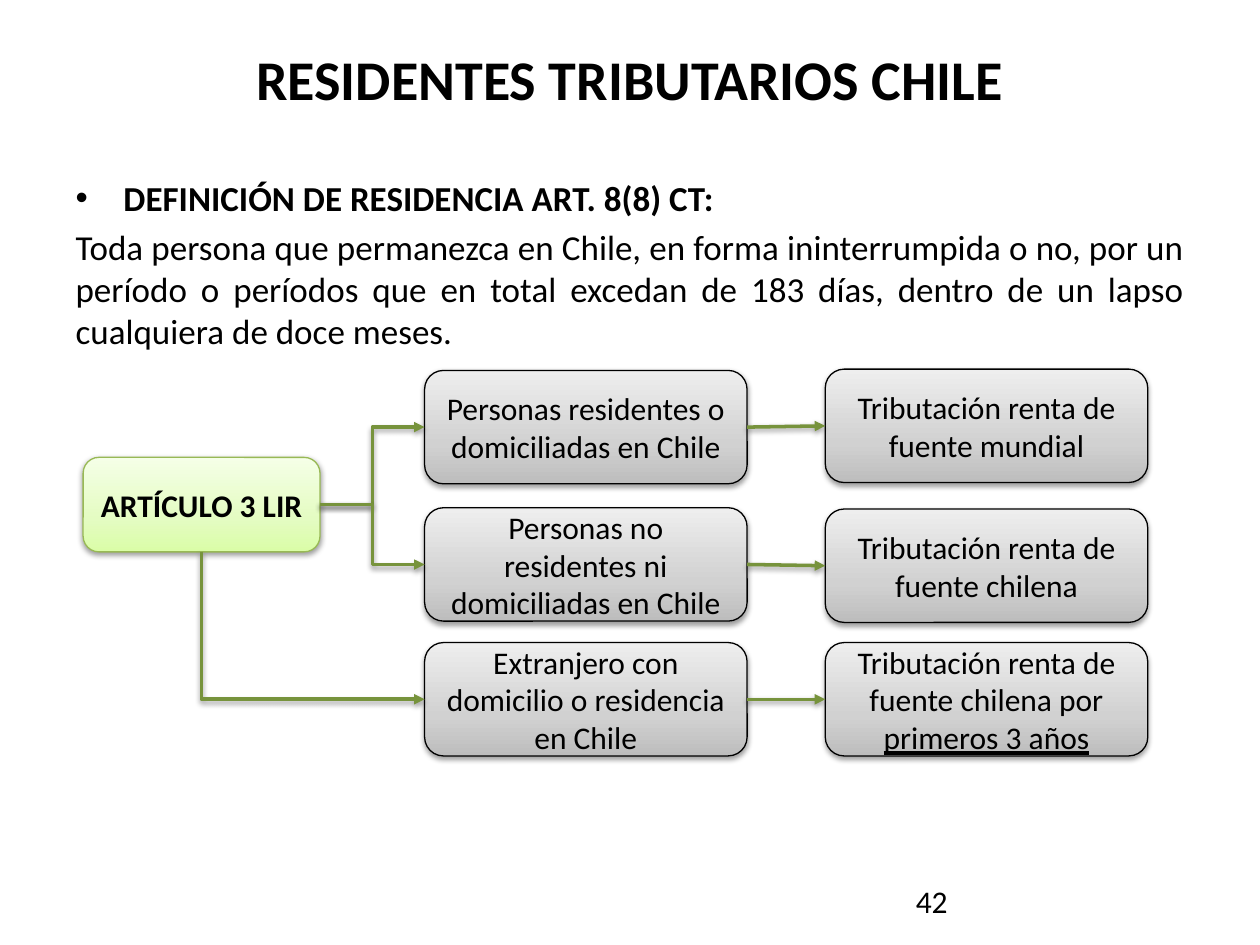
from pptx import Presentation
from pptx.dml.color import RGBColor
from pptx.enum.shapes import MSO_CONNECTOR as CONN, MSO_SHAPE as SHAPE
from pptx.enum.text import MSO_ANCHOR as ANCHOR, PP_ALIGN as ALIGN
from pptx.oxml import parse_xml
from pptx.oxml.ns import nsdecls, qn
from pptx.util import Inches, Pt

COLORS = {"text": "000000", "arrow": "77933C", "green_line": "98B955", "gray_line": "000000"}
GRADIENTS = {
    "green": {0: "DAFDA7", 35: "E4FCC2", 100: "F5FFE7"},
    "gray": {0: "BDBDBD", 35: "D1D1D1", 100: "EEEEEE"},
}
TOP, LEFT, BOTTOM, RIGHT = range(4)
BOX_W, BOX_H = 2.56, 0.9
ROWS = [
    ("Personas residentes o domiciliadas en Chile", 2.94,
     [("Tributación renta de fuente mundial", {})], 2.93),
    ("Personas no residentes ni domiciliadas en Chile", 4.03,
     [("Tributación renta de fuente chilena", {})], 4.04),
    ("Extranjero con domicilio o residencia en Chile", 5.1,
     [("Tributación renta de fuente chilena por ", {}),
      ("primeros 3 años", {"underline": True})], 5.1),
]


def place(sp, box):
    for name, value in zip(("left", "top", "width", "height"), box):
        setattr(sp, name, Inches(value))


def add_run(p, text, size, **formats):
    r = p.add_run()
    r.text = text
    for name, value in {"name": "Calibri", "size": Pt(size), **formats}.items():
        setattr(r.font, name, value)
    r.font.color.rgb = RGBColor.from_string(COLORS["text"])


def add_shadow(sp):
    sp._element.spPr.append(parse_xml(
        f'<a:effectLst {nsdecls("a")}><a:outerShdw blurRad="40000" dist="20000" dir="5400000" '
        'rotWithShape="0"><a:srgbClr val="000000"><a:alpha val="38000"/></a:srgbClr>'
        '</a:outerShdw></a:effectLst>'))


def add_title(slide, box):
    sp = slide.shapes.title
    place(sp, box)
    tf = sp.text_frame
    tf.vertical_anchor = ANCHOR.TOP
    p = tf.paragraphs[0]
    p.alignment = ALIGN.CENTER
    add_run(p, "RESIDENTES TRIBUTARIOS CHILE", 32, bold=True)


def add_definition(slide, box):
    sp = slide.placeholders[1]
    place(sp, box)
    tf = sp.text_frame
    head, body = tf.paragraphs[0], tf.add_paragraph()
    for p, indent, bullet in ((head, 0.38, '<a:buChar {} char="•"/>'), (body, 0, "<a:buNone {}/>")):
        pPr = p._p.get_or_add_pPr()
        pPr.set("marL", str(Inches(indent)))
        pPr.set("indent", str(-Inches(indent)))
        pPr.append(parse_xml(bullet.format(nsdecls("a"))))
        p.alignment = ALIGN.JUSTIFY
    head.space_before = Pt(0)
    body.space_before = Pt(4)
    add_run(head, "DEFINICIÓN DE RESIDENCIA ART. 8(8) CT:", 20, bold=True)
    add_run(body, "Toda persona que permanezca en Chile, en forma ininterrumpida o no, por un "
                  "período o períodos que en total excedan de 183 días, dentro de un lapso "
                  "cualquiera de doce meses.", 20, bold=False)


def add_box(slide, box, runs, style):
    sp = slide.shapes.add_shape(SHAPE.ROUNDED_RECTANGLE, *map(Inches, box))
    stops = "".join(f'<a:gs pos="{pos * 1000}"><a:srgbClr val="{color}"/></a:gs>'
                    for pos, color in GRADIENTS[style].items())
    sp._element.spPr.append(parse_xml(
        f'<a:gradFill {nsdecls("a")} rotWithShape="1"><a:gsLst>{stops}</a:gsLst>'
        '<a:lin ang="16200000" scaled="0"/></a:gradFill>'))
    sp.line.color.rgb = RGBColor.from_string(COLORS[style + "_line"])
    sp.line.width = Pt(0.75)
    add_shadow(sp)
    tf = sp.text_frame
    tf.word_wrap = True
    tf.vertical_anchor = ANCHOR.MIDDLE
    p = tf.paragraphs[0]
    p.alignment = ALIGN.CENTER
    for text, formats in runs:
        add_run(p, text, 18, **formats)
    return sp


def add_arrow(slide, kind, start, start_site, end):
    c = slide.shapes.add_connector(kind, 0, 0, 0, 0)
    c.begin_connect(start, start_site)
    c.end_connect(end, LEFT)
    c.line.color.rgb = RGBColor.from_string(COLORS["arrow"])
    c.line.width = Pt(2)
    c.line._get_or_add_ln().append(parse_xml(f'<a:tailEnd {nsdecls("a")} type="triangle"/>'))
    add_shadow(c)
    return c


def turn_down_then_right(c):
    left, top, width, height = c.left, c.top, c.width, c.height
    c.left, c.top = left + (width - height) // 2, top + (height - width) // 2
    c.width, c.height = height, width
    spPr = c._element.spPr
    spPr.find(qn("a:prstGeom")).set("prst", "bentConnector2")
    xfrm = spPr.find(qn("a:xfrm"))
    xfrm.set("rot", "16200000")
    xfrm.set("flipH", "1")


def add_diagram(slide, box):
    x, y, w, h = box
    article = add_box(slide, (x, y + 0.7, 1.88, 0.75),
                      [("ARTÍCULO 3 LIR", {"bold": True})], "green")
    people = []
    for person, person_y, tax, tax_y in ROWS:
        source = add_box(slide, (x + 2.71, person_y, BOX_W, BOX_H), [(person, {})], "gray")
        target = add_box(slide, (x + w - BOX_W, tax_y, BOX_W, BOX_H), tax, "gray")
        add_arrow(slide, CONN.STRAIGHT, source, RIGHT, target)
        people.append(source)
    for person in people[:2]:
        add_arrow(slide, CONN.ELBOW, article, RIGHT, person)
    turn_down_then_right(add_arrow(slide, CONN.ELBOW, article, BOTTOM, people[2]))


def add_number(slide, box):
    tf = slide.shapes.add_textbox(*map(Inches, box)).text_frame
    tf.word_wrap = True
    tf.vertical_anchor = ANCHOR.MIDDLE
    add_run(tf.paragraphs[0], "42", 18)


def main():
    prs = Presentation()
    prs.slide_width, prs.slide_height = Inches(10), Inches(7.5)
    slide = prs.slides.add_slide(prs.slide_layouts[1])
    add_title(slide, (0.5, 0.3, 9, 1.25))
    add_number(slide, (7.17, 6.95, 2.33, 0.4))
    add_definition(slide, (0.5, 1.35, 9, 5.38))
    add_diagram(slide, (0.66, 2.93, 8.45, 3.07))
    prs.save("out.pptx")


if __name__ == "__main__":
    main()
